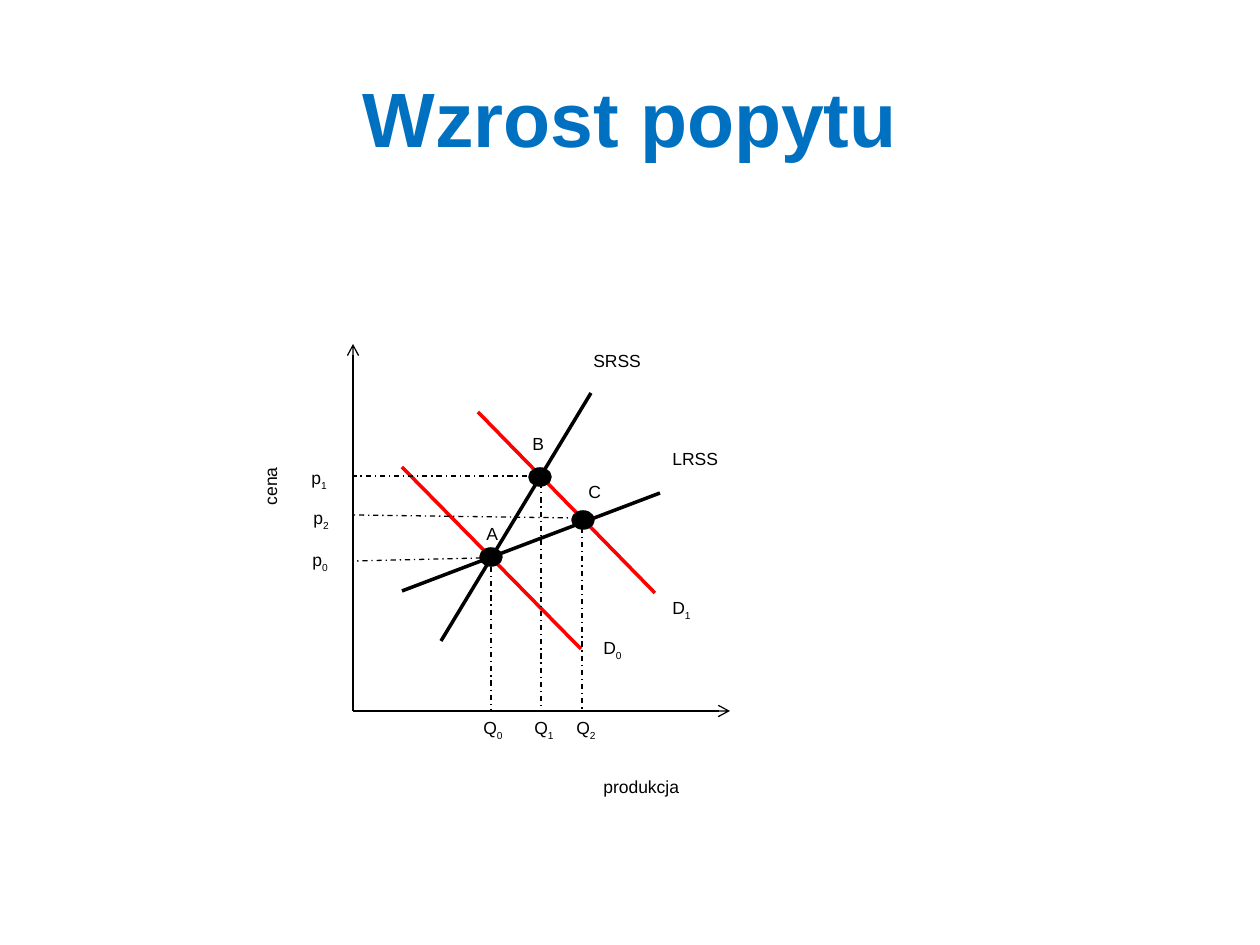
from lxml.etree import SubElement
from pptx import Presentation
from pptx.dml.color import RGBColor
from pptx.enum.dml import MSO_LINE_DASH_STYLE as Dash
from pptx.enum.shapes import MSO_CONNECTOR, MSO_SHAPE
from pptx.enum.text import MSO_ANCHOR, PP_ALIGN
from pptx.oxml.ns import qn
from pptx.util import Pt

PX = 914400 / 126
BLACK = RGBColor(0x00, 0x00, 0x00)
RED = RGBColor(0xFF, 0x00, 0x00)
BLUE = RGBColor(0x00, 0x70, 0xC0)
LABEL_FONT = {"name": "Arial", "size": Pt(10)}
TITLE_FONT = {"name": "Arial", "size": Pt(44), "bold": True}
THIN, THICK = 0.75, 2
LABEL_H = 34
DOT_W, DOT_H = 20, 16

TITLE = ("Wzrost popytu", (63, 38, 1134, 157))
ORIGIN_X, ORIGIN_Y = 353, 711
AXIS_ENDS = [(ORIGIN_X, 344), (730, ORIGIN_Y)]

CURVES = [  # start, end, colour
    ((441, 641), (591, 393), BLACK),
    ((402, 591), (660, 493), BLACK),
    ((402, 467), (581, 649), RED),
    ((478, 412), (655, 593), RED),
]
EQUILIBRIA = [(491, 557), (540, 477), (583, 520)]
GUIDES = [  # start of drop line, start of price line, height at the price axis
    ((491, 567), (481, 558), 561),
    ((541, 469), (541, 476), 476),
    ((582, 528), (577, 518), 515),
]
LABELS = [  # text, subscript, left, top, width, rotation
    ("produkcja", "", 591, 770, 139, 0),
    ("cena", "", 181, 411, 179, 270),
    ("SRSS", "", 581, 344, 79, 0),
    ("LRSS", "", 660, 442, 79, 0),
    ("D", "0", 591, 631, 49, 0),
    ("D", "1", 660, 591, 49, 0),
    ("A", "", 474, 517, 30, 0),
    ("B", "", 520, 427, 30, 0),
    ("C", "", 576, 475, 30, 0),
    ("Q", "0", 471, 711, 50, 0),
    ("Q", "1", 522, 711, 50, 0),
    ("Q", "2", 564, 711, 50, 0),
    ("p", "0", 300, 543, 50, 0),
    ("p", "2", 301, 501, 50, 0),
    ("p", "1", 299, 461, 50, 0),
]


def emu(*lengths):
    return [round(length * PX) for length in lengths]


def add_line(slide, start, end, color=BLACK, width=THIN, dash=None, arrow=False):
    connector = slide.shapes.add_connector(MSO_CONNECTOR.STRAIGHT, *emu(*start, *end))
    for key, value in {"width": Pt(width), "dash_style": dash}.items():
        setattr(connector.line, key, value)
    connector.line.color.rgb = color
    properties = connector._element.spPr
    if arrow:
        SubElement(properties.find(qn("a:ln")), qn("a:tailEnd"), type="arrow")
    SubElement(properties, qn("a:effectLst"))


def add_dot(slide, x, y):
    dot = slide.shapes.add_shape(
        MSO_SHAPE.OVAL, *emu(x - DOT_W / 2, y - DOT_H / 2, DOT_W, DOT_H))
    dot.shadow.inherit = False
    dot.fill.solid()
    dot.fill.fore_color.rgb = BLACK
    dot.line.color.rgb = BLACK
    dot.line.width = Pt(THICK)


def add_text(slide, text, box, font, color=BLACK, subscript=""):
    text_box = slide.shapes.add_textbox(*emu(*box))
    text_box.text_frame.word_wrap = True
    paragraph = text_box.text_frame.paragraphs[0]
    for part in filter(None, (text, subscript)):
        run = paragraph.add_run()
        run.text = part
        for key, value in font.items():
            setattr(run.font, key, value)
        run.font.color.rgb = color
    if subscript:
        run._r.get_or_add_rPr().set("baseline", "-25000")
    return text_box


def main():
    deck = Presentation()
    deck.slide_width, deck.slide_height = emu(1260, 945)
    slide = deck.slides.add_slide(deck.slide_layouts[6])

    title = add_text(slide, *TITLE, TITLE_FONT, BLUE)
    title.text_frame.vertical_anchor = MSO_ANCHOR.MIDDLE
    title.text_frame.paragraphs[0].alignment = PP_ALIGN.CENTER

    for end in AXIS_ENDS:
        add_line(slide, (ORIGIN_X, ORIGIN_Y), end, arrow=True)
    for start, end, color in CURVES:
        add_line(slide, start, end, color, THICK)
    for x, y in EQUILIBRIA:
        add_dot(slide, x, y)
    for drop, price, axis_y in GUIDES:
        add_line(slide, drop, (drop[0], ORIGIN_Y), dash=Dash.DASH_DOT)
        add_line(slide, price, (ORIGIN_X, axis_y), dash=Dash.DASH_DOT)
    for text, subscript, left, top, width, rotation in LABELS:
        label = add_text(slide, text, (left, top, width, LABEL_H), LABEL_FONT,
                         subscript=subscript)
        label.rotation = rotation

    deck.save("out.pptx")


if __name__ == "__main__":
    main()
